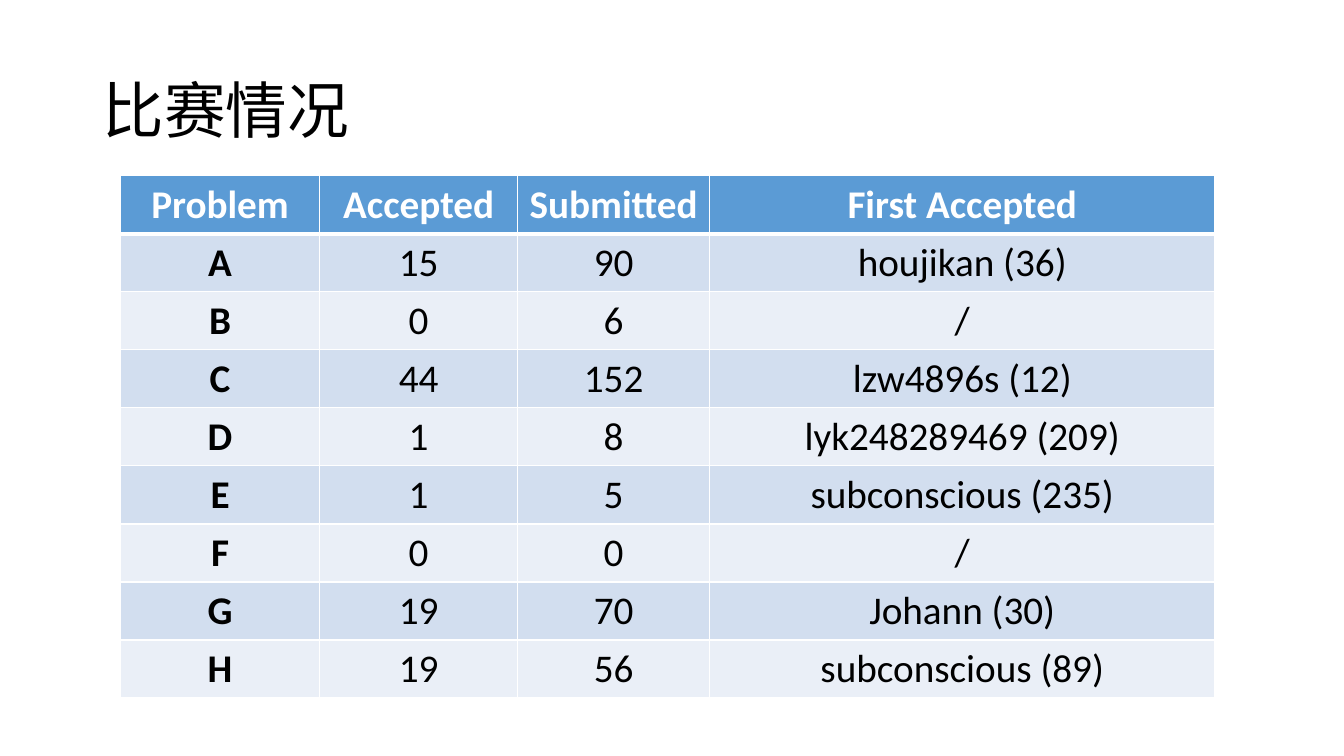
from dataclasses import dataclass

from lxml.etree import SubElement
from pptx import Presentation
from pptx.dml.color import RGBColor
from pptx.enum.text import MSO_ANCHOR, PP_ALIGN
from pptx.oxml.ns import qn
from pptx.util import Cm, Pt

TITLE = "比赛情况"
HEADER = ("Problem", "Accepted", "Submitted", "First Accepted")
RESULTS = [
    ("A", 15, 90, "houjikan (36)"),
    ("B", 0, 6, "/"),
    ("C", 44, 152, "lzw4896s (12)"),
    ("D", 1, 8, "lyk248289469 (209)"),
    ("E", 1, 5, "subconscious (235)"),
    ("F", 0, 0, "/"),
    ("G", 19, 70, "Johann (30)"),
    ("H", 19, 56, "subconscious (89)"),
]
COL_WIDTHS = (5.03, 4.98, 4.85, 12.72)
ROW_HEIGHT = 1.4


@dataclass(frozen=True)
class Theme:
    font: str = "Calibri"
    title_size: int = 44
    table_size: int = 28
    text: str = "000000"
    white: str = "FFFFFF"
    header: str = "5B9BD5"
    bands: tuple = ("D2DEEF", "EAEFF7")
    rule: int = 1
    header_rule: int = 3


theme = Theme()


def put_text(tf, text, size=theme.table_size, color=theme.text, bold=False,
             align=PP_ALIGN.CENTER, spacing=None):
    p = tf.paragraphs[0]
    p.alignment = align
    p.line_spacing = spacing
    r = p.add_run()
    r.text = str(text)
    r.font.name = theme.font
    r.font.size = Pt(size)
    r.font.bold = bold
    r.font.color.rgb = RGBColor.from_string(color)


def set_borders(cell, top, bottom):
    tc_pr = cell._tc.get_or_add_tcPr()
    widths = {"L": theme.rule, "R": theme.rule, "T": top, "B": bottom}
    for side, width in widths.items():
        ln = SubElement(tc_pr, qn(f"a:ln{side}"), w=str(Pt(width)))
        fill = SubElement(ln, qn("a:solidFill"))
        SubElement(fill, qn("a:srgbClr"), val=theme.white)


def add_title(s):
    title = s.shapes.title
    title.left, title.top = Cm(2.33), Cm(1.01)
    title.width, title.height = Cm(29.21), Cm(3.68)
    title.text_frame.vertical_anchor = MSO_ANCHOR.MIDDLE
    put_text(title.text_frame, TITLE, size=theme.title_size,
             align=PP_ALIGN.LEFT, spacing=0.9)


def add_results(s):
    rows = [HEADER, *RESULTS]
    table = s.shapes.add_table(
        len(rows), len(HEADER), Cm(3.03), Cm(4.43),
        Cm(sum(COL_WIDTHS)), Cm(ROW_HEIGHT * len(rows))).table
    for col, width in zip(table.columns, COL_WIDTHS):
        col.width = Cm(width)
    for i, values in enumerate(rows):
        table.rows[i].height = Cm(ROW_HEIGHT)
        is_header = i == 0
        fill = theme.header if is_header else theme.bands[(i - 1) % 2]
        color = theme.white if is_header else theme.text
        top = theme.header_rule if i == 1 else theme.rule
        bottom = theme.header_rule if is_header else theme.rule
        for j, value in enumerate(values):
            cell = table.cell(i, j)
            set_borders(cell, top, bottom)
            cell.fill.solid()
            cell.fill.fore_color.rgb = RGBColor.from_string(fill)
            put_text(cell.text_frame, value, color=color,
                     bold=is_header or j == 0)


def main():
    prs = Presentation()
    prs.slide_width, prs.slide_height = Cm(33.87), Cm(19.05)
    s = prs.slides.add_slide(prs.slide_layouts[5])
    add_title(s)
    add_results(s)
    prs.save("out.pptx")


if __name__ == "__main__":
    main()
